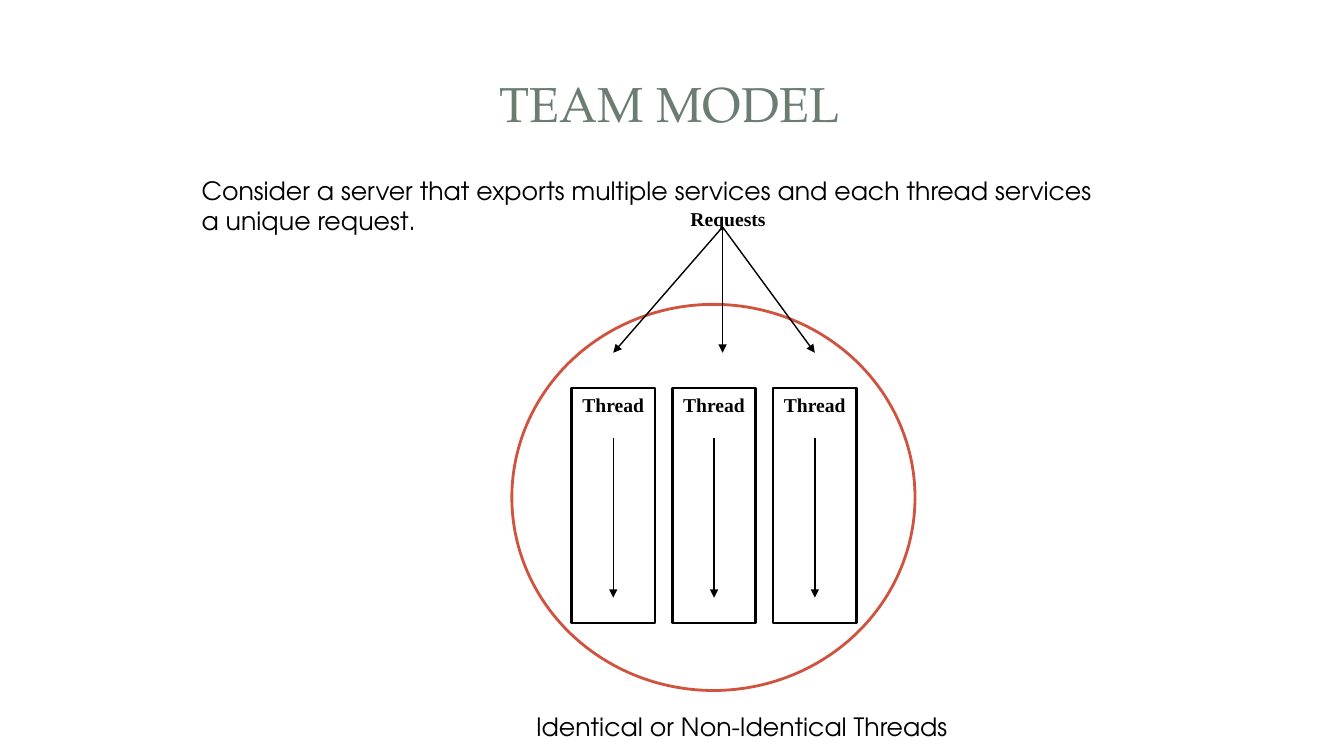
import pptx
import pptx.dml.color
import pptx.enum.shapes
import pptx.enum.text
import pptx.oxml
import pptx.oxml.ns
import pptx.util

Cm = pptx.util.Cm
Pt = pptx.util.Pt
RGBColor = pptx.dml.color.RGBColor
Align = pptx.enum.text.PP_ALIGN
Anchor = pptx.enum.text.MSO_ANCHOR
Shape = pptx.enum.shapes.MSO_SHAPE

WHITE = RGBColor(0xFF, 0xFF, 0xFF)
BLACK = RGBColor(0x00, 0x00, 0x00)
SAGE = RGBColor(0x6B, 0x7D, 0x72)
RUST = RGBColor(0xCF, 0x54, 0x3F)

TITLE = {"name": "TeX Gyre Pagella", "size": Pt(35)}
BODY = {"name": "TeX Gyre Adventor", "size": Pt(18)}
LABEL = {"name": "Times New Roman", "size": Pt(14), "bold": True}


def add_text(page, box, text, font, color=BLACK, align=Align.LEFT, anchor=Anchor.TOP, wrap=True):
    """Place one paragraph of formatted text in the box."""
    frame = page.shapes.add_textbox(*map(Cm, box)).text_frame
    for name, value in {"word_wrap": wrap, "vertical_anchor": anchor}.items():
        setattr(frame, name, value)
    para = frame.paragraphs[0]
    para.alignment = align
    span = para.add_run()
    span.text = text
    for name, value in font.items():
        setattr(span.font, name, value)
    span.font.color.rgb = color


def add_outline(page, kind, box, color):
    """Place a white preset shape with a coloured outline in the box."""
    shape = page.shapes.add_shape(kind, *map(Cm, box))
    shape.shadow.inherit = False
    shape.fill.solid()
    shape.fill.fore_color.rgb = WHITE
    shape.line.color.rgb = color
    shape.line.width = Pt(2)


def add_arrow(page, start, end):
    """Draw a thin black arrow from start to end."""
    straight = pptx.enum.shapes.MSO_CONNECTOR.STRAIGHT
    arrow = page.shapes.add_connector(straight, *map(Cm, start + end))
    arrow.line.color.rgb = BLACK
    arrow.line.width = Pt(1)
    head = pptx.oxml.parse_xml(f'<a:tailEnd {pptx.oxml.ns.nsdecls("a")} type="triangle"/>')
    arrow.line._get_or_add_ln().append(head)
    effects = pptx.oxml.parse_xml(f'<a:effectLst {pptx.oxml.ns.nsdecls("a")}/>')
    arrow._element.spPr.append(effects)


def add_team(page, box):
    """Draw the server circle with its three threads and their requests."""
    left, top, width, height = box
    add_outline(page, Shape.OVAL, box, RUST)
    thread_width, thread_height, pitch = 2.11, 5.92, 2.54
    threads = [(left + 1.5 + index * pitch, top + 2.11) for index in range(3)]
    for x, y in threads:
        add_outline(page, Shape.RECTANGLE, (x, y, thread_width, thread_height), BLACK)
        add_text(page, (x, y, thread_width, 0.86), "Thread", LABEL, align=Align.CENTER)
        middle = x + thread_width / 2
        add_arrow(page, (middle, y + 1.27), (middle, y + 5.28))

    source = (left + 5.31, top - 1.95)
    first, last = (threads[index][0] + thread_width / 2 for index in (0, 2))
    for tip in (first, source[0], last):
        add_arrow(page, source, (tip, top + 1.22))
    add_text(page, (source[0] - 1.06, source[1] - 0.64, 2.54, 0.84), "Requests", LABEL)
    caption = (left + 0.36, top + height + 0.41, 11.25, 1.02)
    add_text(page, caption, "Identical or Non-Identical Threads", BODY, wrap=False)


def add_heading(page, box):
    """Place the title in the box and the introduction beneath it."""
    left, top, width, height = box
    add_text(page, box, "TEAM MODEL", TITLE, SAGE, Align.CENTER, Anchor.MIDDLE)
    add_text(
        page,
        (left + 3.26, top + height + 0.25, 23.5, 1.8),
        "Consider a server that exports multiple services and each thread services a unique request.",
        BODY,
    )


def main():
    """Build the slide and save the deck."""
    deck = pptx.Presentation()
    deck.slide_width, deck.slide_height = Cm(33.87), Cm(19.05)
    page = deck.slides.add_slide(deck.slide_layouts[6])
    page.background.fill.solid()
    page.background.fill.fore_color.rgb = WHITE
    add_heading(page, (1.57, 1.14, 30.61, 2.9))
    add_team(page, (12.9, 7.67, 10.16, 9.73))
    deck.save("out.pptx")


if __name__ == "__main__":
    main()
